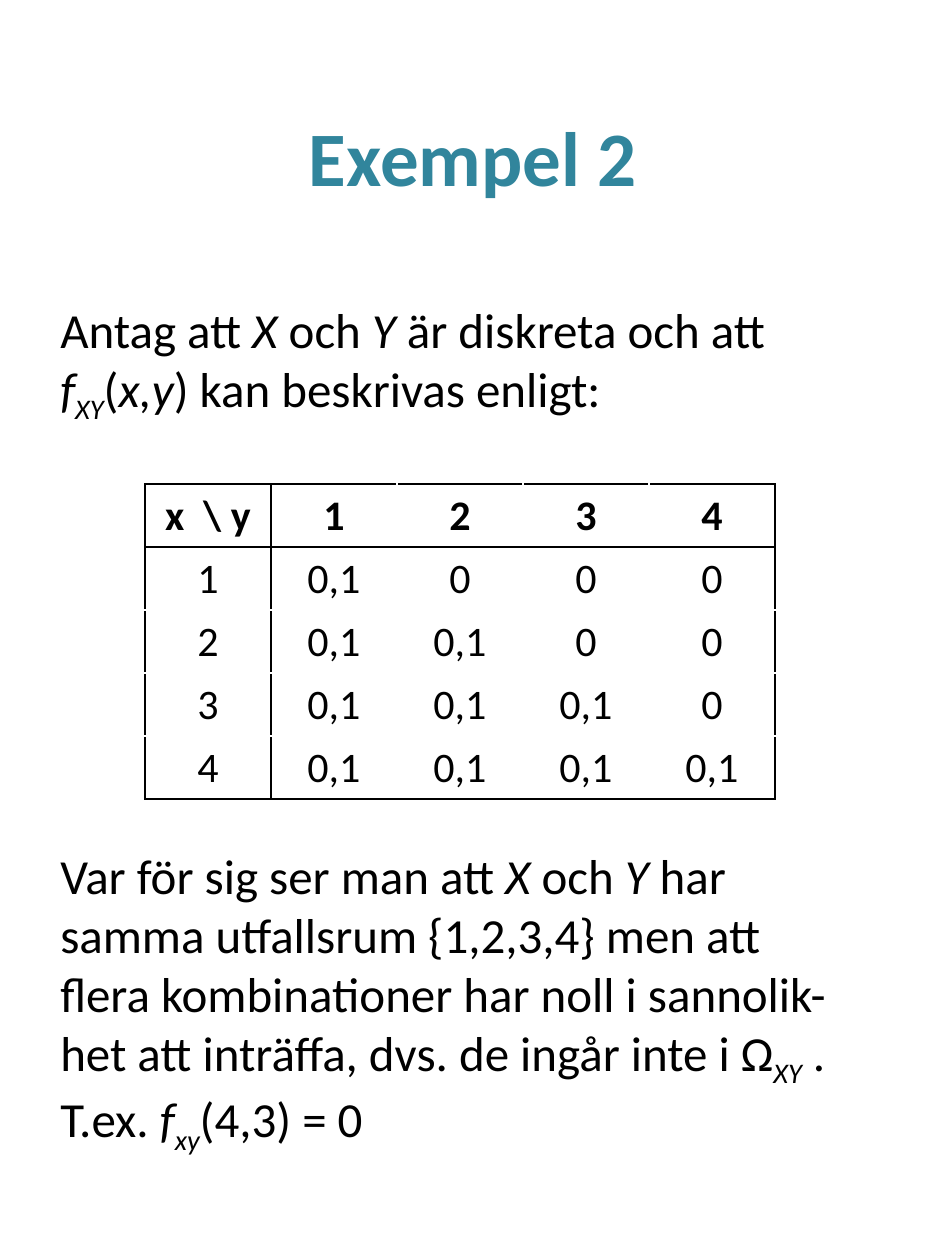
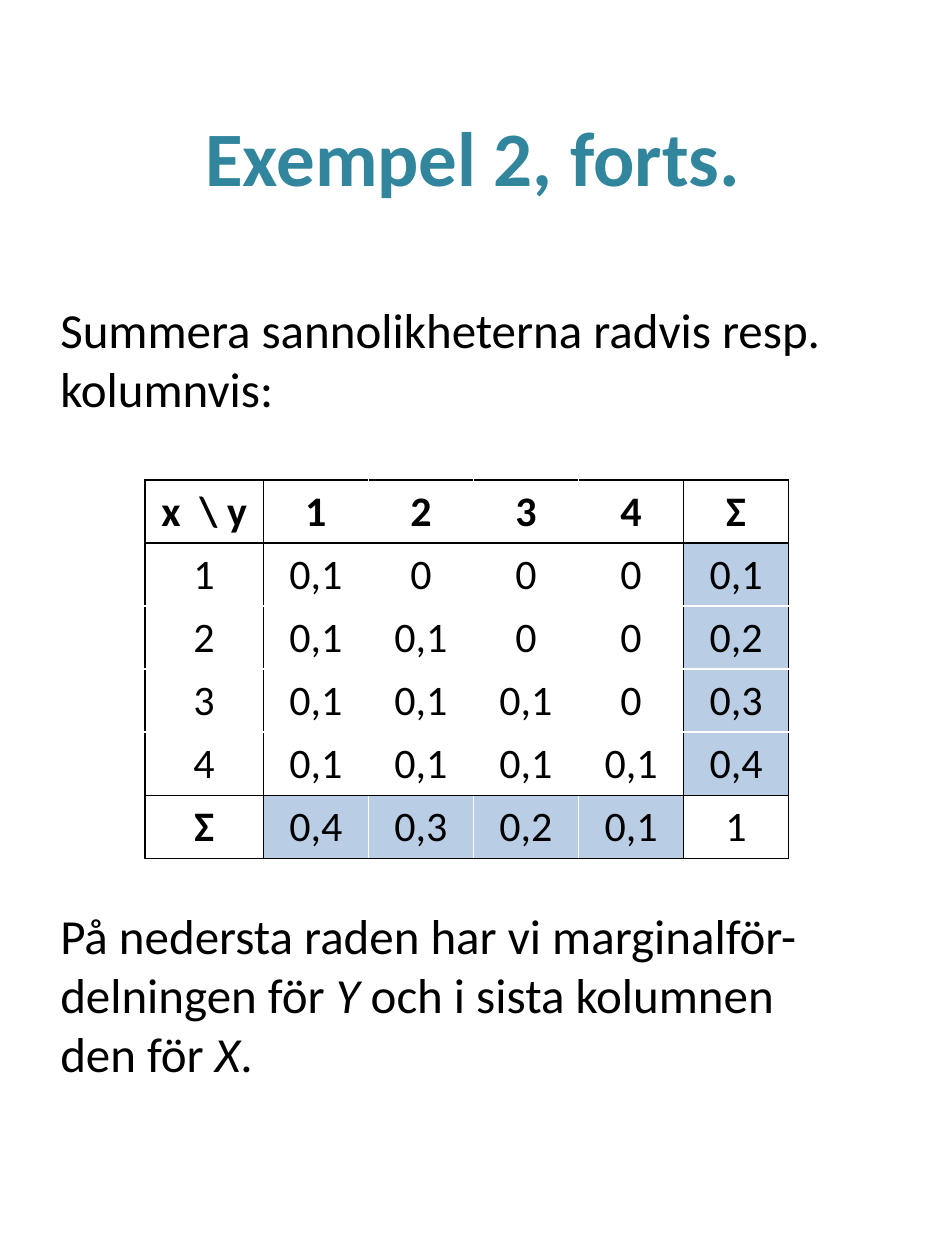
from lxml import etree
from pptx import Presentation
from pptx import util as u
from pptx.dml.color import RGBColor
from pptx.enum import text
from pptx.oxml import ns
from pptx.util import Inches

# Shared look
FONT = "Calibri"
TEAL, BLACK, WHITE, PALE_BLUE = "31859C", "000000", "FFFFFF", "B9CDE5"
LEFT = 0.38
TABLE_LEFT, ROW_HEIGHT = 1.15, 0.5
SUM_INDEX = 5  # row and column that hold the sums

# Probabilities f(x, y), one row for each x
HEADER = ["x  \\ y", "1", "2", "3", "4"]
PROBABILITIES = [
    ["1", "0,1", "0", "0", "0"],
    ["2", "0,1", "0,1", "0", "0"],
    ["3", "0,1", "0,1", "0,1", "0"],
    ["4", "0,1", "0,1", "0,1", "0,1"],
]
ROW_SUMS = ["Σ", "0,1", "0,2", "0,3", "0,4"]
COLUMN_SUMS = ["Σ", "0,4", "0,3", "0,2", "0,1", "1"]


def color(hex_value):
    return RGBColor.from_string(hex_value)


# Text
def italic(words):
    return words, {"slanted": True}


def subscript(words):
    return words, {"slanted": True, "lowered": True}


def add_span(para, words, size=28, fill=BLACK, bold=False, slanted=False, lowered=False):
    span = para.add_run()
    span.text = words
    span.font.name = FONT
    span.font.size = u.Pt(size)
    span.font.bold = bold
    span.font.italic = slanted
    span.font.color.rgb = color(fill)
    if lowered:
        span._r.get_or_add_rPr().set("baseline", "-25000")


def add_box(page, left, top, width, height, anchor):
    box = page.shapes.add_textbox(Inches(left), Inches(top), Inches(width), Inches(height))
    box.text_frame.word_wrap = True
    box.text_frame.vertical_anchor = anchor
    return box.text_frame


def add_title(page, words):
    frame = add_box(page, LEFT, 0.4, 6.75, 1.67, text.MSO_ANCHOR.MIDDLE)
    para = frame.paragraphs[0]
    para.alignment = text.PP_ALIGN.CENTER
    add_span(para, words, size=44, fill=TEAL, bold=True)


def add_body(page, intro, conclusion, gap):
    """Two paragraphs, with a gap in points that leaves room for the table."""
    frame = add_box(page, LEFT, 2.33, 6.52, 6.84, text.MSO_ANCHOR.TOP)
    closing = frame.add_paragraph()
    closing.space_before = u.Pt(gap)
    for para, spans in zip(frame.paragraphs, (intro, conclusion)):
        for span in spans:
            words, style = (span, {}) if isinstance(span, str) else span
            add_span(para, words, **style)


# Table
def set_border(cell, side, hex_value):
    line = etree.SubElement(cell._tc.get_or_add_tcPr(), ns.qn(f"a:ln{side}"), w=str(u.Pt(1)))
    fill = etree.SubElement(line, ns.qn("a:solidFill"))
    etree.SubElement(fill, ns.qn("a:srgbClr"), val=hex_value)


def format_cell(cell, words, row, column, row_count, column_count):
    cell.vertical_anchor = text.MSO_ANCHOR.MIDDLE
    para = cell.text_frame.paragraphs[0]
    para.alignment = text.PP_ALIGN.CENTER
    add_span(para, words, size=24, bold=row == 0 or words == "Σ")

    # Black rules frame the table, its header and its sums
    edges = (("L", column, column_count), ("R", column + 1, column_count),
             ("T", row, row_count), ("B", row + 1, row_count))
    for side, edge, last in edges:
        set_border(cell, side, BLACK if edge in (0, 1, SUM_INDEX, last) else WHITE)

    # Marginal distributions are shaded
    if row and column and (row == SUM_INDEX) != (column == SUM_INDEX):
        cell.fill.solid()
        cell.fill.fore_color.rgb = color(PALE_BLUE)
    else:
        cell.fill.background()


def add_probability_table(page, rows, top, widths):
    row_count, column_count = len(rows), len(widths)
    table = page.shapes.add_table(
        row_count, column_count, Inches(TABLE_LEFT), Inches(top),
        Inches(sum(widths)), Inches(ROW_HEIGHT * row_count)).table
    table.first_row = table.horz_banding = False
    for column, width in zip(table.columns, widths):
        column.width = Inches(width)
    for row, values in enumerate(rows):
        for column, words in enumerate(values):
            format_cell(table.cell(row, column), words, row, column, row_count, column_count)


def main():
    deck = Presentation()
    deck.slide_width, deck.slide_height = Inches(7.5), Inches(10)
    blank = deck.slide_layouts[6]
    joint_rows = [HEADER] + PROBABILITIES

    # Joint distribution
    page = deck.slides.add_slide(blank)
    add_title(page, "Exempel 2")
    add_body(
        page,
        ["Antag att ", italic("X"), " och ", italic("Y"), " är diskreta och att ",
         italic("f"), subscript("XY"), "(", italic("x,y"), ") kan beskrivas enligt:"],
        ["Var för sig ser man att ", italic("X"), " och ", italic("Y"),
         " har samma utfallsrum {1,2,3,4} men att flera kombinationer har noll i "
         "sannolik-het att inträffa, dvs. de ingår inte i Ω", subscript("XY"),
         " . T.ex. ", italic("f"), subscript("xy"), "(4,3) = 0"],
        gap=240)
    add_probability_table(page, joint_rows, top=3.84, widths=[1] * 5)

    # Marginal distributions
    page = deck.slides.add_slide(blank)
    add_title(page, "Exempel 2, forts.")
    add_body(
        page,
        ["Summera sannolikheterna radvis resp. kolumnvis:"],
        ["På nedersta raden har vi marginalför-delningen för ", italic("Y"),
         " och i sista kolumnen den för ", italic("X"), "."],
        gap=279)
    summed_rows = [values + [total] for values, total in zip(joint_rows, ROW_SUMS)]
    add_probability_table(page, summed_rows + [COLUMN_SUMS], top=3.81,
                          widths=[0.94] + [(5.11 - 0.94) / 5] * 5)

    deck.save("out.pptx")


if __name__ == "__main__":
    main()
